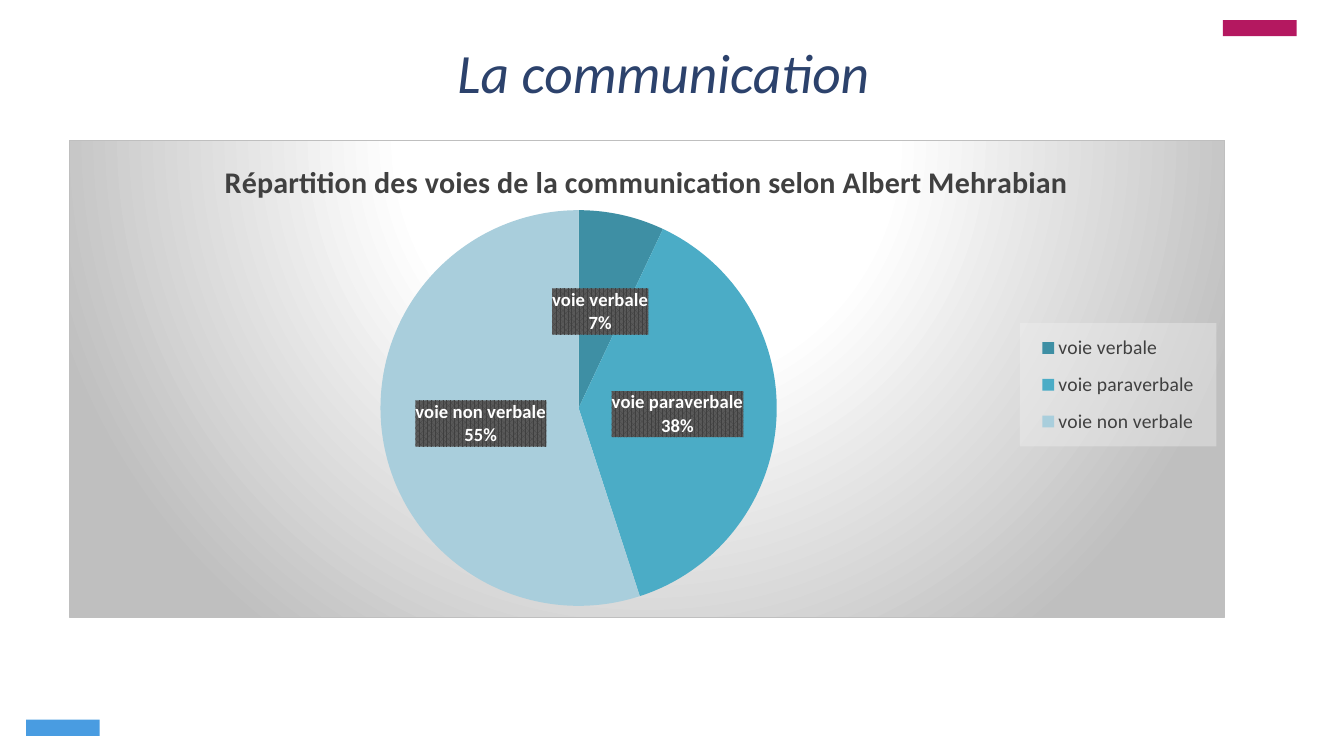
"""Build a slide with a pie chart of the channels of communication."""
from dataclasses import dataclass

from pptx import Presentation
from pptx.chart.chart import Chart
from pptx.chart.data import CategoryChartData
from pptx.dml.color import RGBColor
from pptx.enum.chart import XL_CHART_TYPE, XL_LABEL_POSITION, XL_LEGEND_POSITION
from pptx.enum.shapes import MSO_SHAPE
from pptx.enum.text import MSO_ANCHOR, PP_ALIGN
from pptx.oxml import parse_xml
from pptx.oxml.ns import nsdecls, qn
from pptx.slide import Slide
from pptx.util import Inches, Pt


@dataclass(frozen=True)
class Theme:
    """Font, colours and type sizes of the slide."""
    font: str = "Calibri"
    title: str = "2C426C"
    text: str = "404040"
    light: str = "FFFFFF"
    border: str = "BFBFBF"
    legend_fill: str = "F2F2F2"
    label_dots: str = "404040"
    label_fill: str = "595959"
    title_size: float = 39.6
    heading_size: float = 21.5
    legend_size: float = 14
    label_size: float = 13.3
    base_size: float = 10


@dataclass(frozen=True)
class Bar:
    """A small coloured bar in a corner of the slide."""
    left: float
    top: float
    color: str


@dataclass(frozen=True)
class Channel:
    """A channel of communication with its share in percent."""
    name: str
    share: int
    color: str


THEME = Theme()
BARS = (Bar(12.13, 0.2, "B41860"), Bar(0.26, 7.14, "499CE1"))
CHANNELS = (
    Channel("voie verbale", 7, "3E8FA4"),
    Channel("voie paraverbale", 38, "4BACC6"),
    Channel("voie non verbale", 55, "A9CEDC"),
)


def apply_format(target: object, values: dict[str, object]) -> None:
    """Set each attribute named in the dict on the target."""
    for name, value in values.items():
        setattr(target, name, value)


def style_font(font: object, size: float, color: str, **extra: bool) -> None:
    """Give a font the theme typeface, a size and a colour."""
    apply_format(font, {"name": THEME.font, "size": Pt(size), **extra})
    font.color.rgb = RGBColor.from_string(color)


def solid_color(color: str, inner: str = "") -> str:
    """Return the XML of one colour."""
    return f'<a:srgbClr val="{color}">{inner}</a:srgbClr>'


def set_background(part: object, fill: str) -> None:
    """Place a fill before the text properties of a chart part."""
    part.find(qn("c:txPr")).addprevious(
        parse_xml(f'<c:spPr {nsdecls("c", "a")}>{fill}</c:spPr>'))


def set_layout(part: object, index: int, target: str = "", **percents: float) -> None:
    """Place a chart part by percentages of the chart's size."""
    for old in part.findall(qn("c:layout")):
        part.remove(old)
    values = {"layoutTarget": target} if target else {}
    values |= {"xMode": "edge", "yMode": "edge"}
    values |= {name: f"{percent / 100:.3f}" for name, percent in percents.items()}
    entries = "".join(f'<c:{name} val="{value}"/>' for name, value in values.items())
    part.insert(index, parse_xml(
        f'<c:layout {nsdecls("c")}><c:manualLayout>{entries}</c:manualLayout></c:layout>'))


def add_bar(page: Slide, bar: Bar) -> None:
    """Draw one corner bar."""
    shape = page.shapes.add_shape(MSO_SHAPE.RECTANGLE, Inches(bar.left), Inches(bar.top),
                                  Inches(0.73), Inches(0.16))
    shape.shadow.inherit = False
    shape.fill.solid()
    shape.fill.fore_color.rgb = RGBColor.from_string(bar.color)
    shape.line.fill.background()


def set_title(page: Slide, text: str) -> None:
    """Fill, move and format the title placeholder."""
    title = page.shapes.title
    apply_format(title, {"left": Inches(1.36), "top": Inches(0.68),
                         "width": Inches(10.44), "height": Inches(0.71)})
    frame = title.text_frame
    frame.text = text
    apply_format(frame, {"vertical_anchor": MSO_ANCHOR.MIDDLE, "word_wrap": True,
                         "margin_top": 0, "margin_bottom": Inches(0.66)})
    para = frame.paragraphs[0]
    para.alignment = PP_ALIGN.CENTER
    style_font(para.runs[0].font, THEME.title_size, THEME.title, italic=True)


def add_pie(page: Slide) -> Chart:
    """Add the pie with one coloured slice for each channel."""
    data = CategoryChartData()
    data.categories = [channel.name for channel in CHANNELS]
    data.add_series("Series 1", [channel.share for channel in CHANNELS])
    chart = page.shapes.add_chart(XL_CHART_TYPE.PIE, Inches(0.68), Inches(1.39),
                                  Inches(11.47), Inches(4.74), data).chart
    style_font(chart.font, THEME.base_size, "000000")
    plot = chart.plots[0]
    plot.vary_by_categories = True
    for index, channel in enumerate(CHANNELS):
        fill = plot.series[0].points[index].format.fill
        fill.solid()
        fill.fore_color.rgb = RGBColor.from_string(channel.color)
    plot_area = chart._chartSpace.find(qn("c:chart")).find(qn("c:plotArea"))
    set_layout(plot_area, 0, "inner", x=1.9, y=14.6, w=84.4, h=83)
    stops = ((0, THEME.light), (39, THEME.light), (100, THEME.border))
    gradient = "".join(f'<a:gs pos="{share * 1000}">{solid_color(color)}</a:gs>'
                       for share, color in stops)
    set_background(
        chart._chartSpace,
        f'<a:gradFill><a:gsLst>{gradient}</a:gsLst><a:path path="circle">'
        '<a:fillToRect l="50000" t="-80000" r="50000" b="180000"/></a:path></a:gradFill>'
        f'<a:ln w="{Pt(0.75)}"><a:solidFill>{solid_color(THEME.border)}</a:solidFill></a:ln>')
    return chart


def add_heading(chart: Chart, text: str) -> None:
    """Give the chart its title."""
    chart.has_title = True
    heading = chart.chart_title
    heading.text_frame.text = text
    style_font(heading.text_frame.paragraphs[0].runs[0].font,
               THEME.heading_size, THEME.text, bold=True)
    set_layout(heading._element, 1, x=13, y=3.1)


def add_legend(chart: Chart) -> None:
    """Put a translucent legend on the right."""
    chart.has_legend = True
    legend = chart.legend
    apply_format(legend, {"position": XL_LEGEND_POSITION.RIGHT, "include_in_layout": False})
    style_font(legend.font, THEME.legend_size, THEME.text)
    set_layout(legend._element, 1, x=82.3, y=38.3, w=17, h=25.8)
    color = solid_color(THEME.legend_fill, '<a:alpha val="39000"/>')
    set_background(legend._element, f"<a:solidFill>{color}</a:solidFill>")


def add_labels(chart: Chart) -> None:
    """Show name and percentage on a dark patterned fill in each slice."""
    labels = chart.plots[0].series[0].data_labels
    apply_format(labels, {
        "show_category_name": True, "show_percentage": True, "show_value": False,
        "number_format": "0%", "number_format_is_linked": False,
        "position": XL_LABEL_POSITION.CENTER})
    style_font(labels.font, THEME.label_size, THEME.light, bold=True)
    set_background(
        labels._element,
        f'<a:pattFill prst="pct75"><a:fgClr>{solid_color(THEME.label_dots)}</a:fgClr>'
        f'<a:bgClr>{solid_color(THEME.label_fill)}</a:bgClr></a:pattFill>')
    separator = parse_xml(f'<c:separator {nsdecls("c")}>\n</c:separator>')
    last_flag = labels._element.find(qn("c:showBubbleSize"))
    if last_flag is None:
        last_flag = labels._element.find(qn("c:showPercent"))
    last_flag.addnext(separator)


def main() -> None:
    """Build and save the deck."""
    deck = Presentation()
    apply_format(deck, {"slide_width": Inches(13.33), "slide_height": Inches(7.5)})
    page = deck.slides.add_slide(deck.slide_layouts[5])
    for bar in BARS:
        add_bar(page, bar)
    set_title(page, "La communication")
    chart = add_pie(page)
    add_heading(chart, "Répartition des voies de la communication selon Albert Mehrabian")
    add_legend(chart)
    add_labels(chart)
    deck.save("out.pptx")


if __name__ == "__main__":
    main()
